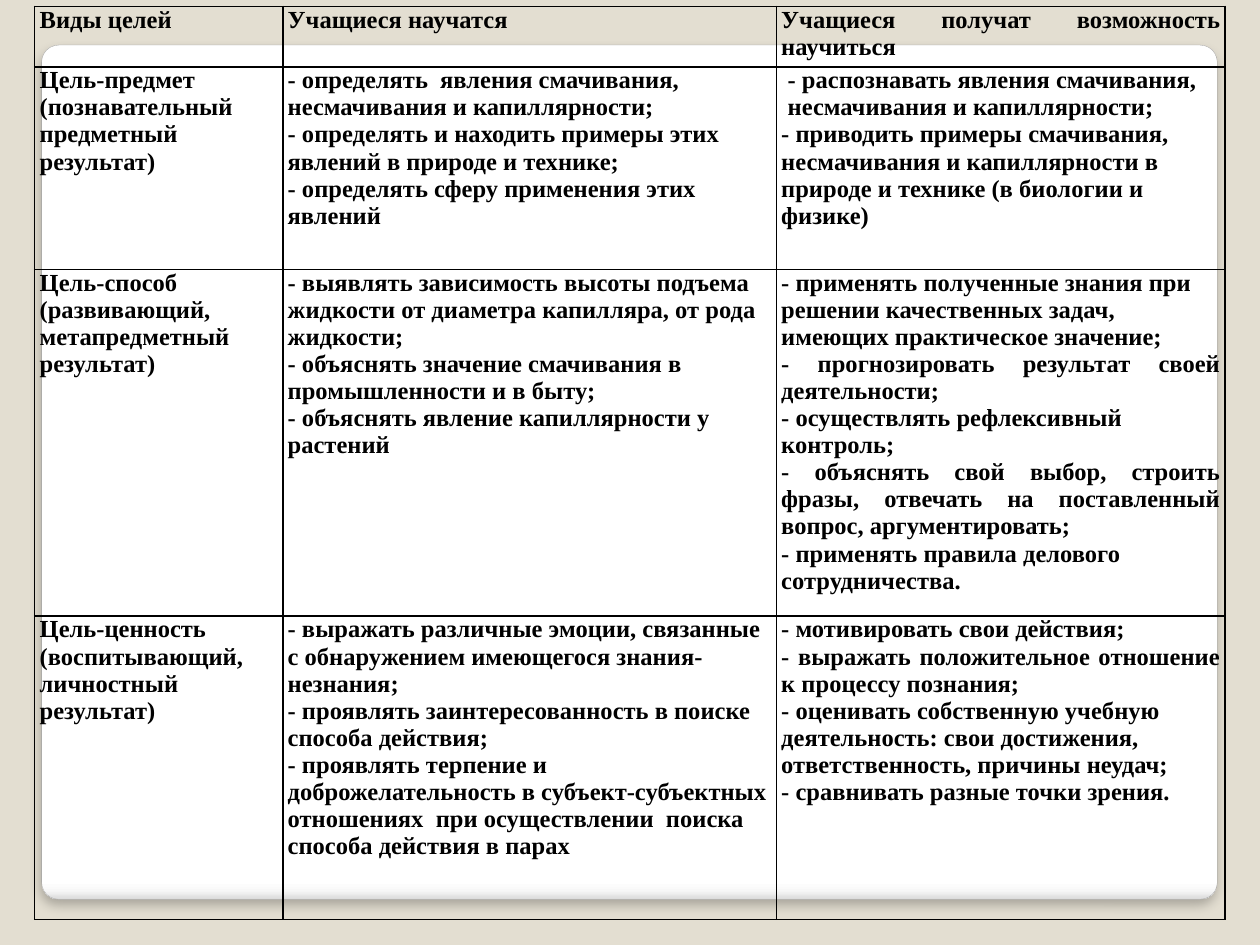
import lxml.etree
import pptx
import pptx.dml.color
import pptx.enum.shapes
import pptx.enum.text
import pptx.oxml
import pptx.oxml.ns
import pptx.util

Cm = pptx.util.Cm
Pt = pptx.util.Pt
ALIGN = pptx.enum.text.PP_ALIGN

COLORS = {"background": "E3DED1", "text": "000000", "border": "000000",
          "panel": "FFFFFF", "panel_shade": "F7F7F7", "panel_edge": "DADADA",
          "panel_line": "A4A4A4", "shadow": "000000"}


class Justified(str):
    """A paragraph aligned to both margins."""


class Indented(str):
    """A paragraph with a small left indent."""


HEADER = ["Виды целей", "Учащиеся научатся", "Учащиеся получат возможность научиться"]
GOALS = [
    [["Цель-предмет", "(познавательный предметный результат)"],
     ["- определять  явления смачивания, несмачивания и капиллярности;",
      "- определять и находить примеры этих явлений в природе и технике;",
      "- определять сферу применения этих явлений"],
     [Indented("- распознавать явления смачивания, несмачивания и капиллярности;"),
      "- приводить примеры смачивания, несмачивания и капиллярности в природе "
      "и технике (в биологии и физике)"]],
    [["Цель-способ", "(развивающий, метапредметный результат)"],
     ["- выявлять зависимость высоты подъема жидкости от диаметра капилляра, "
      "от рода жидкости;",
      "- объяснять значение смачивания в промышленности и в быту;",
      "- объяснять явление капиллярности у растений"],
     ["- применять полученные знания при решении качественных задач, "
      "имеющих практическое значение;",
      Justified("- прогнозировать результат своей деятельности;"),
      "- осуществлять рефлексивный контроль;",
      Justified("- объяснять свой выбор, строить фразы, отвечать на "
                "поставленный вопрос, аргументировать;"),
      "- применять правила делового сотрудничества."]],
    [["Цель-ценность", "(воспитывающий, личностный результат)"],
     ["- выражать различные эмоции, связанные с обнаружением имеющегося "
      "знания-незнания;",
      "- проявлять заинтересованность в поиске способа действия;",
      "- проявлять терпение и доброжелательность в субъект-субъектных "
      "отношениях  при осуществлении  поиска способа действия в парах"],
     ["- мотивировать свои действия;",
      Justified("- выражать положительное отношение к процессу познания;"),
      "- оценивать собственную учебную деятельность: свои достижения, "
      "ответственность, причины неудач;",
      "- сравнивать разные точки зрения."]],
]


def color(name):
    return pptx.dml.color.RGBColor.from_string(COLORS[name])


def element(xml):
    """Parse a DrawingML fragment that uses the a: prefix."""
    return pptx.oxml.parse_xml(xml.replace(" ", f" {pptx.oxml.ns.nsdecls('a')} ", 1))


class SlideBuilder:
    font = "Times New Roman"
    size = Pt(14)

    def __init__(self, slide):
        self.slide = slide

    def background(self):
        fill = self.slide.background.fill
        fill.solid()
        fill.fore_color.rgb = color("background")

    def panel(self, left, top, width, height):
        shape = self.slide.shapes.add_shape(
            pptx.enum.shapes.MSO_SHAPE.ROUNDED_RECTANGLE, left, top, width, height)
        shape.adjustments[0] = 0.02
        shape.line.color.rgb = color("panel_line")
        shape.line.width = Pt(0.16)
        # Gradient that darkens only at the bottom edge
        stops = [(0, "panel"), (98, "panel"), (99, "panel_shade"), (100, "panel_edge")]
        stop_xml = "".join(f'<a:gs pos="{position * 1000}"><a:srgbClr val="{COLORS[name]}"/></a:gs>'
                           for position, name in stops)
        properties = shape.fill._xPr
        properties.find(pptx.oxml.ns.qn("a:prstGeom")).addnext(element(
            f'<a:gradFill rotWithShape="1"><a:gsLst>{stop_xml}</a:gsLst>'
            '<a:lin ang="5400000" scaled="0"/></a:gradFill>'))
        # Soft shadow below
        properties.append(element(
            f'<a:effectLst ><a:outerShdw blurRad="{Pt(6)}" dist="{Pt(4)}" dir="5400000" '
            f'algn="tl" rotWithShape="0"><a:srgbClr val="{COLORS["shadow"]}">'
            '<a:alpha val="25000"/></a:srgbClr></a:outerShdw></a:effectLst>'))

    def table(self, left, top, widths, heights, rows):
        table = self.slide.shapes.add_table(
            len(rows), len(widths), left, top, sum(widths), sum(heights)).table
        table.first_row = False
        table.horz_banding = False
        for column, width in zip(table.columns, widths):
            column.width = width
        for row, height, contents in zip(table.rows, heights, rows):
            row.height = height
            for cell, texts in zip(row.cells, contents):
                self.cell(cell, texts)

    def cell(self, cell, texts):
        cell.margin_left = cell.margin_right = Cm(0.1)
        cell.margin_top = cell.margin_bottom = 0
        properties = cell._tc.get_or_add_tcPr()
        for side in "LRTB":
            properties.append(element(
                f'<a:ln{side} w="{Pt(1)}"><a:solidFill><a:srgbClr val="{COLORS["border"]}"/>'
                f'</a:solidFill></a:ln{side}>'))
        cell.fill.background()
        cell.text_frame.text = "\n".join(texts)
        for paragraph, text in zip(cell.text_frame.paragraphs, texts):
            paragraph.alignment = ALIGN.JUSTIFY if isinstance(text, Justified) else ALIGN.LEFT
            if isinstance(text, Indented):
                paragraph._p.get_or_add_pPr().set("marL", str(Cm(0.13)))
            for run in paragraph.runs:
                run.font.name = self.font
                run.font.size = self.size
                run.font.bold = True
                run.font.color.rgb = color("text")


def main():
    presentation = pptx.Presentation()
    presentation.slide_width = Cm(25.4)
    presentation.slide_height = Cm(19.05)
    builder = SlideBuilder(presentation.slides.add_slide(presentation.slide_layouts[6]))

    # Backdrop
    builder.background()
    builder.panel(Cm(0.84), Cm(0.91), Cm(23.7), Cm(17.22))

    # Table of goals: the header and the first column are justified
    rows = [[[Justified(title)] for title in HEADER]]
    rows += [[[Justified(text) for text in kind], *outcomes] for kind, *outcomes in GOALS]
    widths = [Cm(5), Cm(9.95), Cm(9.05)]
    heights = [Cm(1.22), Cm(4.08), Cm(6.99), Cm(6.12)]
    builder.table(Cm(0.7), Cm(0.13), widths, heights, rows)

    presentation.save("out.pptx")


if __name__ == "__main__":
    main()
